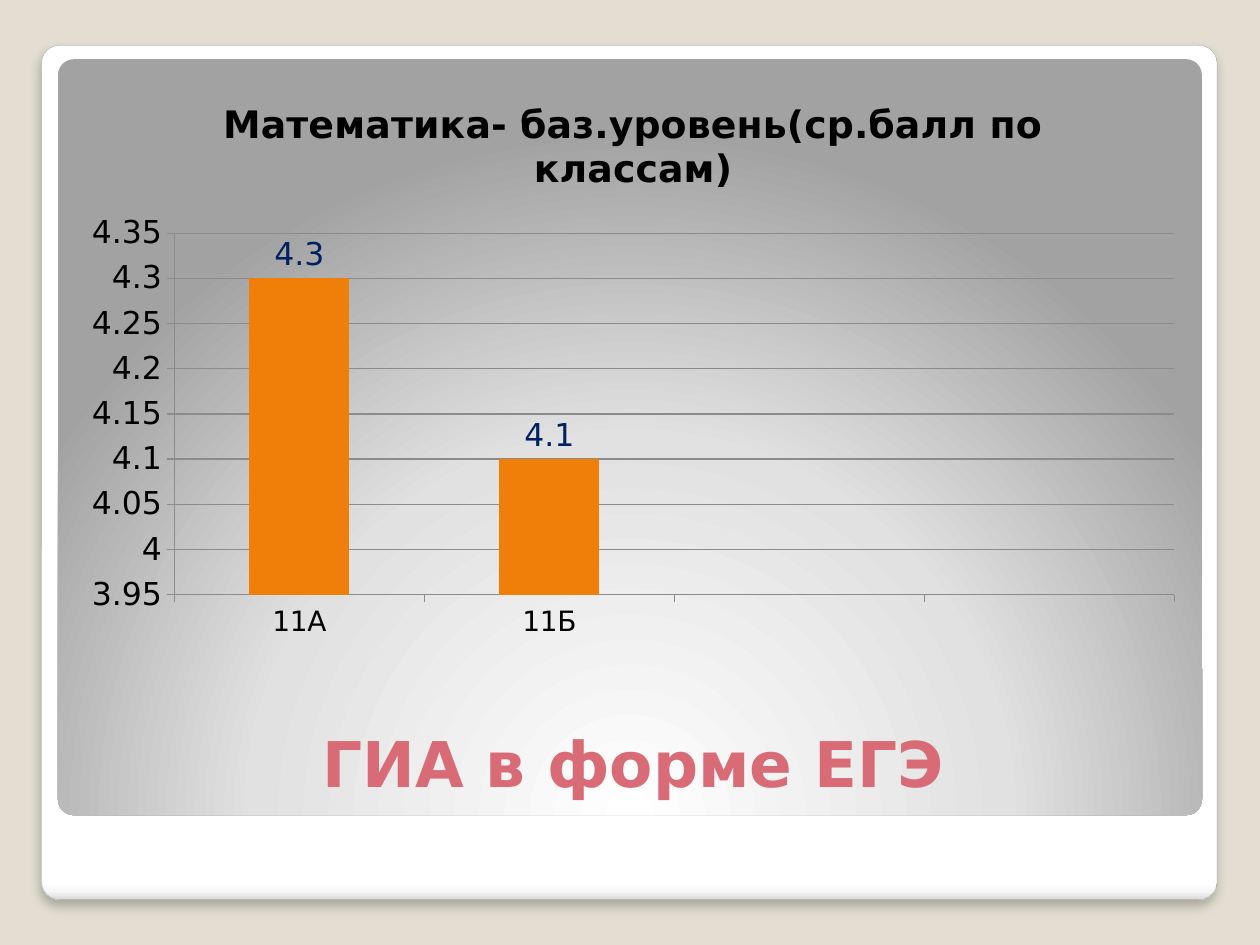
from lxml.etree import SubElement
from pptx import Presentation
from pptx.chart.data import CategoryChartData
from pptx.dml.color import RGBColor
from pptx.enum.chart import XL_CHART_TYPE, XL_LABEL_POSITION, XL_TICK_MARK
from pptx.enum.shapes import MSO_SHAPE
from pptx.enum.text import MSO_ANCHOR, PP_ALIGN
from pptx.oxml.ns import qn
from pptx.util import Inches, Pt

FONT = "DejaVu Sans"
COLORS = {
    "background": "E3DED1",
    "outline": "A4A4A4",
    "shadow": "000000",
    "heading": "D96B77",
    "text": "000000",
    "bar": "F07F09",
    "label": "002060",
    "grid": "8B8B8B",
}
CARD_STOPS = [(0, "FFFFFF"), (98, "FFFFFF"), (99, "F7F7F7"), (100, "DADADA")]
PANEL_STOPS = [(0, "FFFFFF"), (55, "E1E1E1"), (100, "A2A2A2")]


def color(name):
    """Return the named colour."""
    return RGBColor.from_string(COLORS[name])


def style_font(font, size, name, bold=False):
    """Apply the typeface, size, colour and weight."""
    font.name = FONT
    font.size = Pt(size)
    font.bold = bold
    font.color.rgb = color(name)


def add_child(parent, tag, **attributes):
    """Append a drawing element with the given attributes."""
    return SubElement(parent, qn(tag), {key: str(value) for key, value in attributes.items()})


def add_rounded(slide, box, stops):
    """Place a gradient rounded rectangle and return it with its gradient element."""
    rounded = slide.shapes.add_shape(MSO_SHAPE.ROUNDED_RECTANGLE, *map(Inches, box))
    rounded.adjustments[0] = 0.021
    rounded.shadow.inherit = False
    rounded.line.fill.background()
    rounded.fill.gradient()
    gradient = rounded._element.spPr.find(qn("a:gradFill"))
    for child in list(gradient):
        gradient.remove(child)
    stop_list = add_child(gradient, "a:gsLst")
    for position, value in stops:
        stop = add_child(stop_list, "a:gs", pos=position * 1000)
        add_child(stop, "a:srgbClr", val=value)
    return rounded, gradient


def add_card(slide, box):
    """Place the white card with its soft shadow."""
    card, gradient = add_rounded(slide, box, CARD_STOPS)
    add_child(gradient, "a:lin", ang=90 * 60000, scaled=0)
    card.line.color.rgb = color("outline")
    card.line.width = Pt(0.16)
    effects = card._element.spPr.find(qn("a:effectLst"))
    shadow = add_child(effects, "a:outerShdw", blurRad=Pt(6), dist=Pt(4),
                       dir=90 * 60000, algn="tl", rotWithShape=0)
    shade = add_child(shadow, "a:srgbClr", val=COLORS["shadow"])
    add_child(shade, "a:alpha", val=25000)


def add_panel(slide, box):
    """Place the grey panel lit from below."""
    _, gradient = add_rounded(slide, box, PANEL_STOPS)
    glow = add_child(gradient, "a:path", path="circle")
    add_child(glow, "a:fillToRect", l=50000, t=175000, r=50000, b=-75000)


def add_heading(slide, box):
    """Place the slide heading at the bottom of its box."""
    frame = slide.shapes.add_textbox(*map(Inches, box)).text_frame
    frame.word_wrap = True
    frame.vertical_anchor = MSO_ANCHOR.BOTTOM
    frame.text = "ГИА в форме ЕГЭ"
    heading = frame.paragraphs[0]
    heading.alignment = PP_ALIGN.CENTER
    style_font(heading.runs[0].font, 36, "heading", bold=True)


def style_axis(axis, size):
    """Format the line, ticks and labels of an axis."""
    axis.format.line.color.rgb = color("grid")
    axis.major_tick_mark = XL_TICK_MARK.OUTSIDE
    axis.minor_tick_mark = XL_TICK_MARK.NONE
    style_font(axis.tick_labels.font, size, "text")


def add_scores(slide, box):
    """Place the column chart of average scores by class."""
    scores = CategoryChartData()
    scores.categories = ["11А", "11Б", "", ""]
    scores.add_series("Series 1", [4.3, 4.1, None, None])
    chart = slide.shapes.add_chart(
        XL_CHART_TYPE.COLUMN_CLUSTERED, *map(Inches, box), scores).chart
    style_font(chart.font, 18, "text")
    chart.has_legend = False
    chart.has_title = True
    title = chart.chart_title
    title.include_in_layout = False
    title.text_frame.text = "Математика- баз.уровень(ср.балл по классам)"
    style_font(title.text_frame.paragraphs[0].runs[0].font, 21.6, "text", bold=True)

    style_axis(chart.category_axis, 16)
    score_axis = chart.value_axis
    style_axis(score_axis, 18)
    score_axis.minimum_scale = 3.95
    score_axis.maximum_scale = 4.35
    score_axis.major_unit = 0.05
    score_axis.has_major_gridlines = True
    score_axis.major_gridlines.format.line.color.rgb = color("grid")

    columns = chart.plots[0]
    columns.gap_width = 150
    columns.vary_by_categories = False
    bars = columns.series[0]
    bars.format.fill.solid()
    bars.format.fill.fore_color.rgb = color("bar")
    labels = bars.data_labels
    labels.show_value = True
    labels.position = XL_LABEL_POSITION.OUTSIDE_END
    style_font(labels.font, 18, "label")


def main():
    """Build the slide and save it."""
    deck = Presentation()
    deck.slide_width, deck.slide_height = Inches(10), Inches(7.5)
    slide = deck.slides.add_slide(deck.slide_layouts[6])
    slide.background.fill.solid()
    slide.background.fill.fore_color.rgb = color("background")
    add_card(slide, (0.33, 0.36, 9.33, 6.78))
    add_panel(slide, (0.46, 0.47, 9.08, 6))
    add_heading(slide, (0.55, 5.23, 8.95, 1.17))
    add_scores(slide, (0.55, 0.58, 8.95, 4.58))
    deck.save("out.pptx")


if __name__ == "__main__":
    main()
